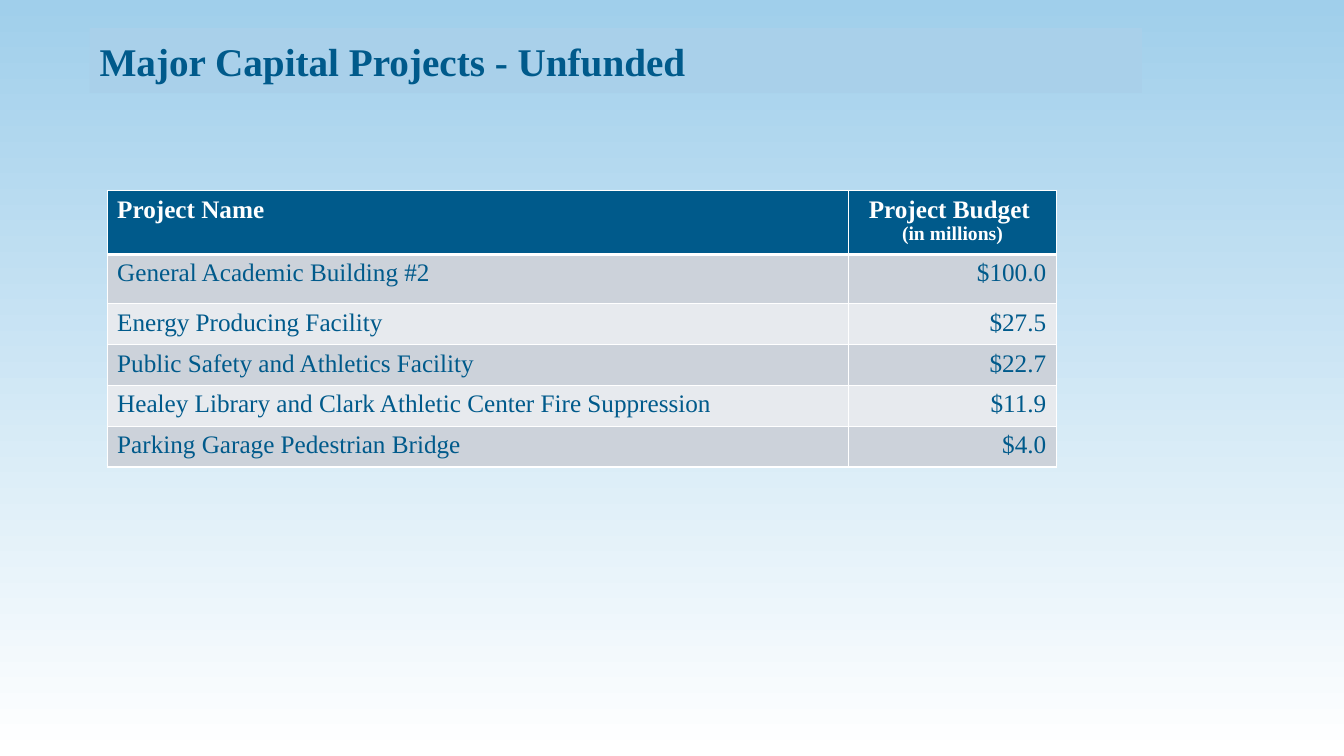
"""Builds the slide that lists the unfunded major capital projects."""
from lxml.etree import SubElement
from pptx import Presentation
from pptx.dml.color import RGBColor
from pptx.enum.text import MSO_ANCHOR as Anchor, PP_ALIGN as Align
from pptx.oxml.ns import qn
from pptx.util import Cm, Pt

NAVY = RGBColor(0x00, 0x5A, 0x8B)
SKY = RGBColor(0xA0, 0xCF, 0xEB)
TITLE_BLUE = RGBColor(0xA9, 0xD0, 0xEA)
DARK_BAND = RGBColor(0xCC, 0xD2, 0xDA)
LIGHT_BAND = RGBColor(0xE7, 0xEA, 0xEE)
WHITE = RGBColor(0xFF, 0xFF, 0xFF)

PROJECTS = [
    ("General Academic Building #2", "$100.0"),
    ("Energy Producing Facility", "$27.5"),
    ("Public Safety and Athletics Facility", "$22.7"),
    ("Healey Library and Clark Athletic Center Fire Suppression", "$11.9"),
    ("Parking Garage Pedestrian Bridge", "$4.0"),
]
COLUMN_WIDTHS = (18.69, 5.23)
ROW_HEIGHTS = (1.49, 1.24, 1.03, 1.03, 1.03, 1.03)


class ProjectSlide:
    """Holds the slide and its text style."""

    font = "Times New Roman"

    def __init__(self, deck):
        self.slide = deck.slides.add_slide(deck.slide_layouts[6])

    def background(self, top, bottom):
        """Fill the slide with a gradient from top to bottom."""
        fill = self.slide.background.fill
        fill.gradient()
        fill.gradient_angle = 270
        for stop, position, color in zip(fill.gradient_stops, (0, 1), (top, bottom)):
            stop.position = position
            stop.color.rgb = color

    def text_run(self, paragraph, text, size, color, bold=False, align=Align.LEFT):
        """Add one run to a paragraph."""
        paragraph.alignment = align
        run = paragraph.add_run()
        run.text = text
        run.font.name = self.font
        run.font.size = Pt(size)
        run.font.bold = bold
        run.font.color.rgb = color

    def title(self, text, left, top, width, height):
        """Add the filled title bar."""
        bar = self.slide.shapes.add_textbox(Cm(left), Cm(top), Cm(width), Cm(height))
        bar.fill.solid()
        bar.fill.fore_color.rgb = TITLE_BLUE
        bar.text_frame.word_wrap = True
        bar.text_frame.vertical_anchor = Anchor.MIDDLE
        self.text_run(bar.text_frame.paragraphs[0], text, 28, NAVY, bold=True)

    def borders(self, cell, bottom):
        """Draw white cell borders with the given bottom width."""
        properties = cell._tc.get_or_add_tcPr()
        for index, (side, width) in enumerate(zip("LRTB", (1, 1, 1, bottom))):
            line = SubElement(properties, qn(f"a:ln{side}"), w=str(Pt(width)))
            fill = SubElement(line, qn("a:solidFill"))
            SubElement(fill, qn("a:srgbClr"), val=str(WHITE))
            properties.insert(index, line)

    def cell(self, cell, lines, fill, color, bold=False, align=Align.LEFT, bottom=1):
        """Fill a cell with lines given as text and size."""
        cell.fill.solid()
        cell.fill.fore_color.rgb = fill
        self.borders(cell, bottom)
        frame = cell.text_frame
        for index, (text, size) in enumerate(lines):
            paragraph = frame.add_paragraph() if index else frame.paragraphs[0]
            self.text_run(paragraph, text, size, color, bold, align)

    def budget_table(self, left, top):
        """Add the table of projects and their budgets."""
        table = self.slide.shapes.add_table(
            len(ROW_HEIGHTS), len(COLUMN_WIDTHS), Cm(left), Cm(top),
            Cm(sum(COLUMN_WIDTHS)), Cm(sum(ROW_HEIGHTS))).table
        for column, width in zip(table.columns, COLUMN_WIDTHS):
            column.width = Cm(width)
        for row, height in zip(table.rows, ROW_HEIGHTS):
            row.height = Cm(height)
        header = {"fill": NAVY, "color": WHITE, "bold": True, "bottom": 3}
        self.cell(table.cell(0, 0), [("Project Name", 18)], **header)
        self.cell(table.cell(0, 1), [("Project Budget ", 18), ("(in millions)", 14)],
                  align=Align.CENTER, **header)
        for row, (project, budget) in enumerate(PROJECTS, start=1):
            band = DARK_BAND if row % 2 else LIGHT_BAND
            self.cell(table.cell(row, 0), [(project, 18)], band, NAVY)
            self.cell(table.cell(row, 1), [(budget, 18)], band, NAVY, align=Align.RIGHT)


def main():
    """Build and save the deck."""
    deck = Presentation()
    deck.slide_width, deck.slide_height = Cm(33.87), Cm(19.05)
    projects = ProjectSlide(deck)
    projects.background(SKY, WHITE)
    projects.title("Major Capital Projects - Unfunded", 2.26, 0.71, 26.52, 1.63)
    projects.budget_table(2.7, 4.8)
    deck.save("out.pptx")


if __name__ == "__main__":
    main()
